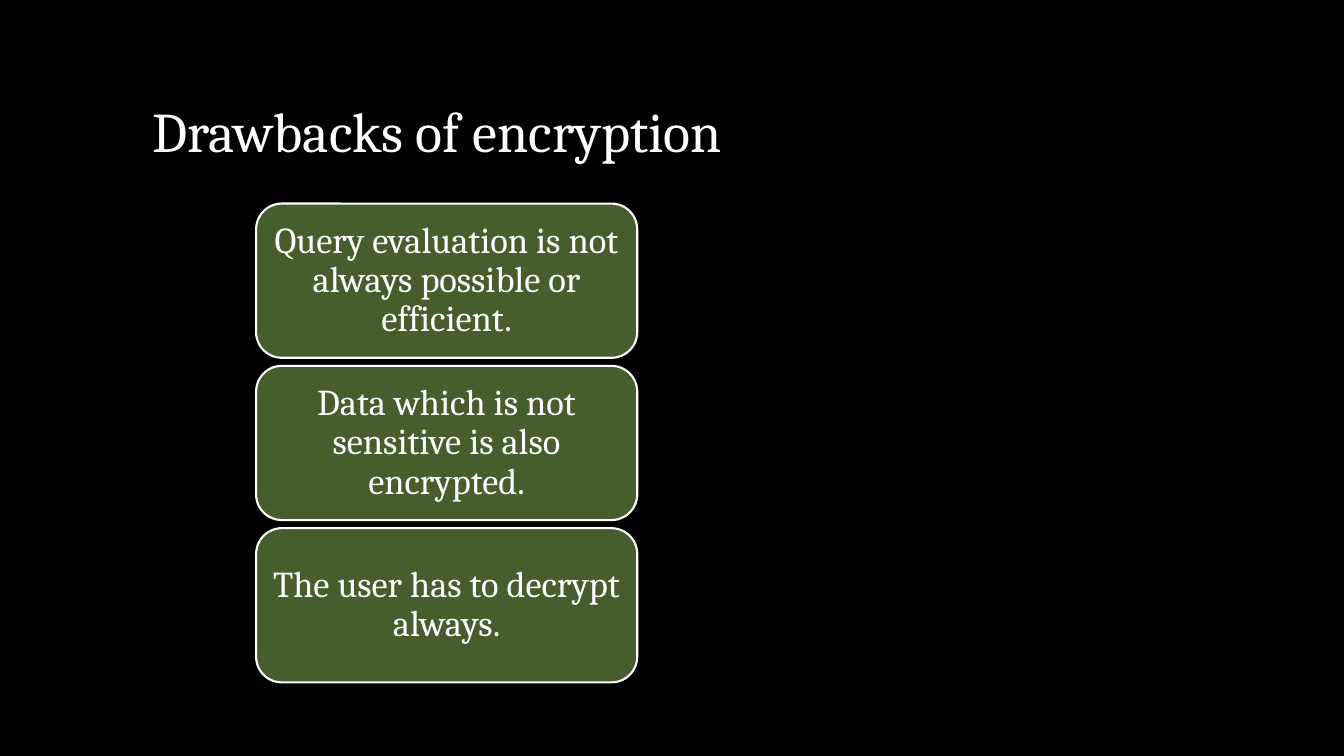
from pptx import Presentation
from pptx.dml.color import RGBColor
from pptx.enum.shapes import MSO_SHAPE
from pptx.enum.text import MSO_ANCHOR, PP_ALIGN
from pptx.util import Inches, Pt

# Content
TITLE = "Drawbacks of encryption"
DRAWBACKS = [
    "Query evaluation is not always possible or efficient.",
    "Data which is not sensitive is also encrypted.",
    "The user has to decrypt always.",
]

# Style
FONT = "Cambria"
BLACK = RGBColor(0x00, 0x00, 0x00)
WHITE = RGBColor(0xFF, 0xFF, 0xFF)
GREEN = RGBColor(0x48, 0x5D, 0x2E)

# Column of cards, in inches
LEFT, TOP = 2.54, 2.02
CARD_W, CARD_H = 3.78, 1.53
GAP = 0.08


def write(tf, text, size, spacing, align, anchor):
    tf.word_wrap = True
    tf.vertical_anchor = anchor
    p = tf.paragraphs[0]
    p.text = text
    p.alignment = align
    p.line_spacing = spacing
    font = p.runs[0].font
    font.name, font.size = FONT, Pt(size)
    font.color.rgb = WHITE


def add_card(s, row, text):
    top = TOP + row * (CARD_H + GAP)
    sp = s.shapes.add_shape(MSO_SHAPE.ROUNDED_RECTANGLE, Inches(LEFT),
                            Inches(top), Inches(CARD_W), Inches(CARD_H))
    sp.shadow.inherit = False
    sp.fill.solid()
    sp.fill.fore_color.rgb = GREEN
    sp.line.color.rgb = WHITE
    sp.line.width = Pt(1.5)
    tf = sp.text_frame
    tf.margin_left = tf.margin_right = Inches(0.04)
    tf.margin_top = tf.margin_bottom = 0
    write(tf, text, 26, 0.9, PP_ALIGN.CENTER, MSO_ANCHOR.MIDDLE)


def main():
    prs = Presentation()
    prs.slide_width, prs.slide_height = Inches(13.33), Inches(7.5)
    s = prs.slides.add_slide(prs.slide_layouts[5])
    s.background.fill.solid()
    s.background.fill.fore_color.rgb = BLACK

    # Title
    title = s.shapes.title
    title.left, title.top = Inches(1.41), Inches(0.42)
    title.width, title.height = Inches(10.5), Inches(1.25)
    write(title.text_frame, TITLE, 40, 0.8, PP_ALIGN.LEFT, MSO_ANCHOR.BOTTOM)

    # Drawbacks
    for row, text in enumerate(DRAWBACKS):
        add_card(s, row, text)

    prs.save("out.pptx")


if __name__ == "__main__":
    main()
